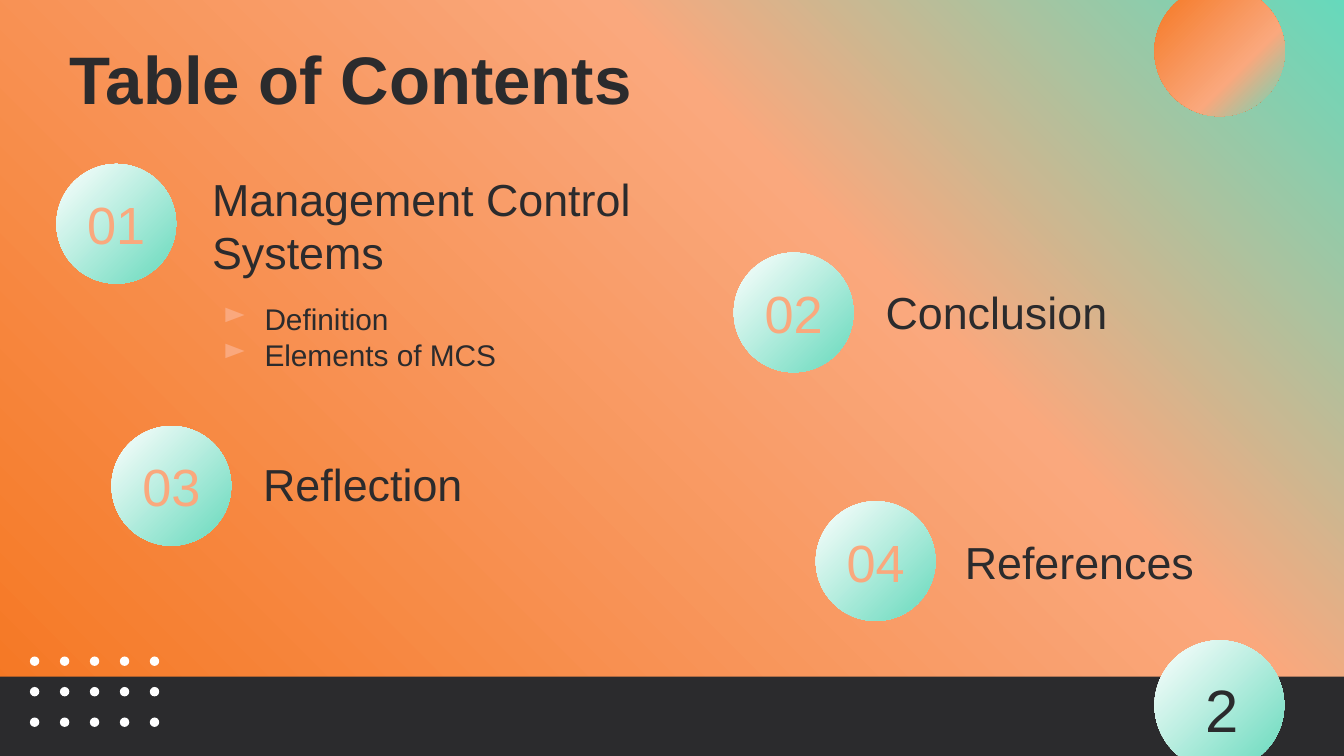
from copy import deepcopy
from dataclasses import dataclass
from itertools import product

from pptx import Presentation
from pptx.dml.color import RGBColor as Rgb
from pptx.enum.shapes import MSO_SHAPE as Shape
from pptx.enum.text import MSO_ANCHOR as Anchor, PP_ALIGN as Align
from pptx.oxml.ns import qn
from pptx.oxml.xmlchemy import OxmlElement
from pptx.util import Inches, Pt

COLUMNS, ROWS = 100, 56.25  # square grid cells


@dataclass(frozen=True)
class Theme:
    font: str = "Arial"
    dark: str = "2B2B2D"
    white: str = "FFFFFF"
    peach: str = "FAA87D"
    sunset: tuple = ((0, "F57620"), (0.65, "FAA87D"), (1, "66D9BC"))
    mint: tuple = ((0, "FFFFFF"), (1, "66D9BC"))
    title: int = 36
    page_number: int = 32
    number: int = 28
    heading: int = 24
    item: int = 16


class Canvas:
    def __init__(self, deck, theme):
        self.theme = theme
        self.cell = deck.slide_width / COLUMNS
        self.page = deck.slides.add_slide(deck.slide_layouts[6])

    def place(self, *cells):
        return [round(value * self.cell) for value in cells]

    def gradient(self, fill, owner, stops, angle):
        """Fill with any number of stops; angle runs counter-clockwise."""
        fill.gradient()
        fill.gradient_angle = angle
        stop_list = next(owner.iter(qn("a:gsLst")))
        for _ in stops[2:]:
            stop_list.append(deepcopy(stop_list[0]))
        for stop, (position, color) in zip(fill.gradient_stops, stops):
            stop.position = position
            stop.color.rgb = Rgb.from_string(color)

    def background(self, stops, angle):
        self.gradient(self.page.background.fill, self.page.element, stops, angle)

    def shape(self, kind, cells, paint):
        """Draw a borderless shape, filled with a colour or gradient stops."""
        shape = self.page.shapes.add_shape(kind, *self.place(*cells))
        shape.shadow.inherit = False
        shape.line.fill.background()
        if isinstance(paint, str):
            shape.fill.solid()
            shape.fill.fore_color.rgb = Rgb.from_string(paint)
        else:
            self.gradient(shape.fill, shape.element, paint, 315)

    def circle(self, left, top, size, paint):
        self.shape(Shape.OVAL, (left, top, size, size), paint)

    def text(self, cells, lines, size, color=None, bold=False,
             align=Align.LEFT, bullet=None, **frame_format):
        box = self.page.shapes.add_textbox(*self.place(*cells))
        frame = box.text_frame
        margins = {f"margin_{side}": Inches(0.1)
                   for side in ("left", "top", "right", "bottom")}
        settings = {"word_wrap": True, "vertical_anchor": Anchor.MIDDLE}
        for name, value in (settings | margins | frame_format).items():
            setattr(frame, name, value)
        for index, line in enumerate(lines):
            para = frame.add_paragraph() if index else frame.paragraphs[0]
            para.alignment = align
            span = para.add_run()
            span.text = line
            font_format = {"name": self.theme.font, "size": Pt(size), "bold": bold}
            for name, value in font_format.items():
                setattr(span.font, name, value)
            span.font.color.rgb = Rgb.from_string(color or self.theme.dark)
            if bullet:
                self.bullet(para, bullet)

    def bullet(self, para, mark):
        props = para._p.get_or_add_pPr()
        indent = Inches(0.31)
        props.set("marL", str(indent))
        props.set("indent", str(-indent))
        tint = OxmlElement("a:buClr")
        color = OxmlElement("a:srgbClr")
        color.set("val", self.theme.peach)
        tint.append(color)
        char = OxmlElement("a:buChar")
        char.set("char", mark)
        props.extend([tint, char])


def build():
    deck = Presentation()
    deck.slide_width, deck.slide_height = Inches(10), Inches(5.625)
    theme = Theme()
    canvas = Canvas(deck, theme)

    canvas.background(theme.sunset, 45)
    canvas.shape(Shape.RECTANGLE, (0, 50.35, COLUMNS, ROWS - 50.35), theme.dark)
    canvas.circle(85.9, 47.65, 9.65, theme.mint)
    canvas.circle(85.9, -1.05, 9.7, theme.sunset)
    for row, column in product(range(3), range(5)):
        canvas.circle(2.23 + 2.23 * column, 48.85 + 2.27 * row, 0.7, theme.white)

    canvas.text((4.2, 1.8, 71.1, 6.5), ["Table of Contents"], theme.title,
                bold=True, vertical_anchor=Anchor.TOP)

    # number, circle left and top, heading box
    topics = [
        ("01", 4.2, 12.2, "Management Control Systems", (14.8, 12.5, 34.1, 8.5)),
        ("02", 54.6, 18.8, "Conclusion", (64.9, 21.1, 28.9, 4.1)),
        ("03", 8.3, 31.7, "Reflection", (18.6, 33.9, 17.3, 4.1)),
        ("04", 60.7, 37.3, "References", (70.8, 39.7, 28.9, 4.1)),
    ]
    for number, left, top, heading, heading_cells in topics:
        canvas.circle(left, top, 8.9, theme.mint)
        canvas.text((left + 0.25, top + 1.55, 8.4, 5.8), [number], theme.number,
                    color=theme.peach, align=Align.CENTER)
        canvas.text(heading_cells, [heading], theme.heading)

    canvas.text((15.6, 19.4, 34.1, 8.5), ["Definition", "Elements of MCS"],
                theme.item, bullet="►", vertical_anchor=Anchor.BOTTOM,
                margin_bottom=Inches(0.02))
    canvas.text((86.7, 49.8, 8.4, 5.8), ["2"], theme.page_number, align=Align.CENTER)

    deck.save("out.pptx")


if __name__ == "__main__":
    build()
